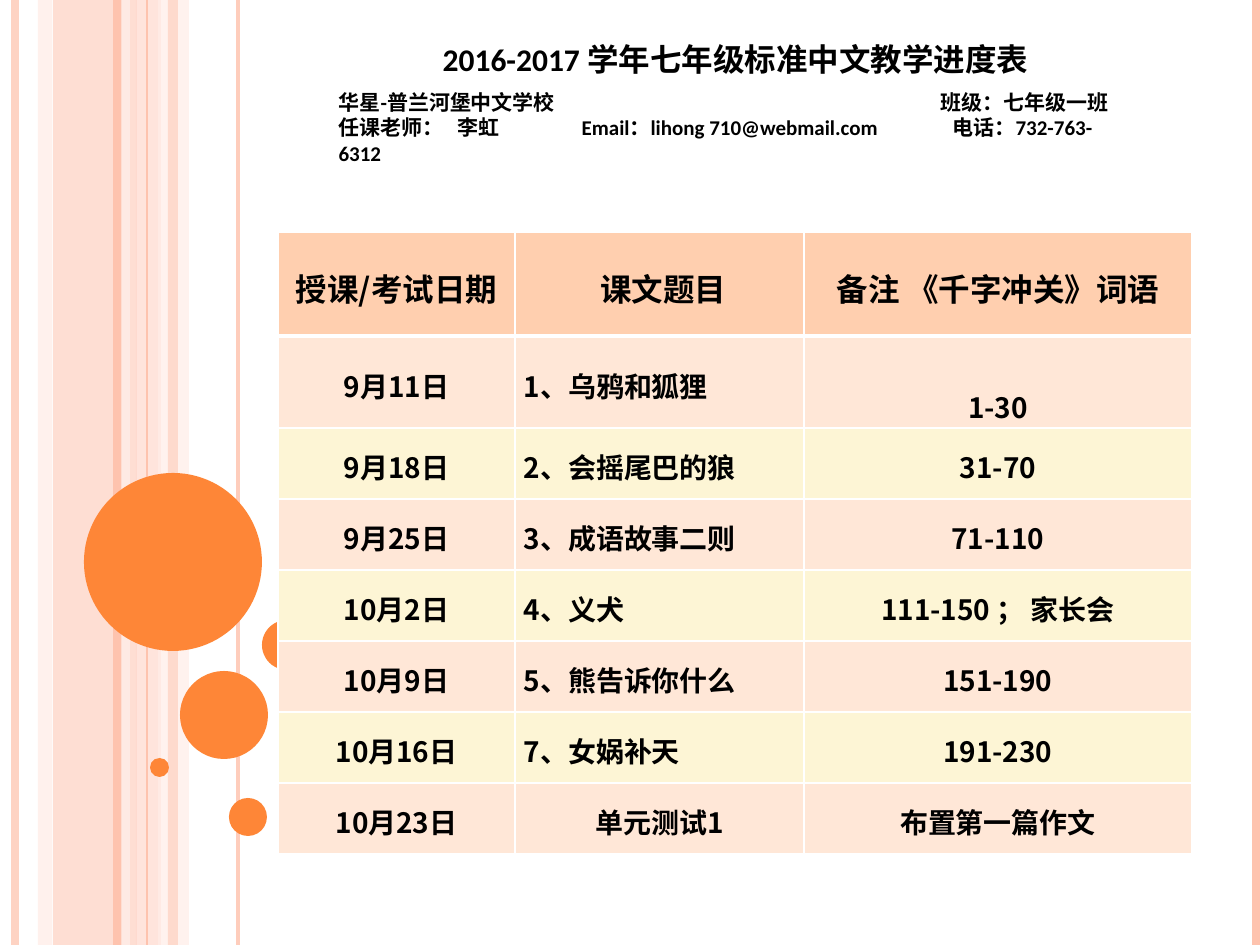
import pptx
import pptx.dml.color
import pptx.enum.shapes
import pptx.enum.text
import pptx.oxml
import pptx.oxml.ns
import pptx.util

SCALE = 914400 / 126
SLIDE_WIDTH, SLIDE_HEIGHT = 1260, 945
COLORS = {
    "rose": "FEC3AE", "blush": "FFD9CE", "mist": "FFEDE8", "orange": "FE8637",
    "header": "FFCFAF", "odd_row": "FFE7D7", "even_row": "FDF5D5",
    "white": "FFFFFF", "black": "000000",
}
CJK_FONT = "Noto Sans CJK SC"
ALIGN = pptx.enum.text.PP_ALIGN

WIDE_BANDS = [
    (53, 84, "rose", 54), (38, 14, "blush", 36),
    (136, 25, "blush", 70), (158, 31, "mist", 71),
]
THIN_LINES = [
    (15, 4.5, "rose", 73), (126, 4.5, "mist", 83), (117, 4.5, "rose", 100),
    (238, 2.25, "rose", 82), (147, 0.75, "rose", 100), (1256, 4.5, "rose", 100),
]
INNER_BAND = (168, 10, "rose", 51)
BUBBLES = [
    (84, 473, 178), (180, 671, 88), (150, 758, 19), (229, 798, 38), (262, 620, 50),
]
HEADING = [
    ("2016-2017 学年七年级标准中文教学进度表", 18, ALIGN.CENTER, []),
    ("华星-普兰河堡中文学校\t班级：七年级一班", 12, ALIGN.LEFT, [602]),
    ("任课老师：\t李虹\tEmail：lihong 710@webmail.com\t电话：732-763-6312",
     12, ALIGN.LEFT, [119, 243, 614]),
]
COLUMN_WIDTHS = [237, 289, 388]
ROW_HEIGHTS = [104, 92] + [71] * 6
SCHEDULE = [
    ("授课/考试日期", "课文题目", "备注 《千字冲关》词语"),
    ("9月11日", "1、乌鸦和狐狸", "1-30"),
    ("9月18日", "2、会摇尾巴的狼", "31-70"),
    ("9月25日", "3、成语故事二则", "71-110"),
    ("10月2日", "4、义犬", "111-150 ； 家长会"),
    ("10月9日", "5、熊告诉你什么", "151-190"),
    ("10月16日", "7、女娲补天", "191-230"),
    ("10月23日", "单元测试1", "布置第一篇作文"),
]


def px(length):
    """Turn pixels into EMU."""
    return pptx.util.Emu(round(length * SCALE))


def rgb(color):
    """Look up a named colour."""
    return pptx.dml.color.RGBColor.from_string(COLORS[color])


def add_child(parent, tag, **attributes):
    """Append a DrawingML element with attributes."""
    child = pptx.oxml.parse_xml(f"<a:{tag} {pptx.oxml.ns.nsdecls('a')}/>")
    for key, value in attributes.items():
        child.set(key, str(value))
    parent.append(child)
    return child


def set_opacity(element, percent):
    """Make the colours inside an element partly transparent."""
    if percent < 100:
        for color in element.iter(pptx.oxml.ns.qn("a:srgbClr")):
            add_child(color, "alpha", val=percent * 1000)


def add_filled(slide, kind, left, top, width, height, color, opacity=100):
    """Add a borderless shape in one colour."""
    shape = slide.shapes.add_shape(kind, px(left), px(top), px(width), px(height))
    shape.shadow.inherit = False
    shape.fill.solid()
    shape.fill.fore_color.rgb = rgb(color)
    shape.line.fill.background()
    set_opacity(shape._element.spPr, opacity)


def add_band(slide, left, width, color, opacity):
    """Add a vertical band over the full height."""
    rectangle = pptx.enum.shapes.MSO_SHAPE.RECTANGLE
    add_filled(slide, rectangle, left, 0, width, SLIDE_HEIGHT, color, opacity)


def add_thin_line(slide, x, weight, color, opacity):
    """Add a vertical line over the full height."""
    straight = pptx.enum.shapes.MSO_CONNECTOR.STRAIGHT
    line = slide.shapes.add_connector(straight, px(x), 0, px(x), px(SLIDE_HEIGHT))
    line.line.color.rgb = rgb(color)
    line.line.width = pptx.util.Pt(weight)
    set_opacity(line._element.spPr, opacity)
    add_child(line._element.spPr, "effectLst")


def format_runs(paragraph, font, size):
    """Give every run of a paragraph bold black type."""
    for run in paragraph.runs:
        run.font.name = font
        run.font.size = pptx.util.Pt(size)
        run.font.bold = True
        run.font.color.rgb = rgb("black")


def fill_heading(slide):
    """Place the title and the class details in the title placeholder."""
    heading = slide.shapes.title
    heading.left, heading.top, heading.width, heading.height = map(px, (326, 45, 819, 115))
    frame = heading.text_frame
    frame.word_wrap = True
    frame.auto_size = pptx.enum.text.MSO_AUTO_SIZE.SHAPE_TO_FIT_TEXT
    frame.vertical_anchor = pptx.enum.text.MSO_ANCHOR.MIDDLE
    frame.text = "\n".join(text for text, *_ in HEADING)
    for paragraph, (_, size, align, stops) in zip(frame.paragraphs, HEADING):
        paragraph.alignment = align
        format_runs(paragraph, "Calibri", size)
        if stops:
            tabs = add_child(paragraph._p.get_or_add_pPr(), "tabLst")
            for stop in stops:
                add_child(tabs, "tab", pos=px(stop), algn="l")
    frame.paragraphs[0].space_after = pptx.util.Pt(7)


def set_borders(cell, top, bottom):
    """Draw white cell borders, with top and bottom weights in points."""
    for side, weight in (("L", 1), ("R", 1), ("T", top), ("B", bottom)):
        border = add_child(cell._tc.get_or_add_tcPr(), f"ln{side}", w=pptx.util.Pt(weight))
        add_child(add_child(border, "solidFill"), "srgbClr", val=COLORS["white"])


def fill_cell(cell, text, row, align):
    """Write and format one cell of the schedule."""
    set_borders(cell, 3 if row == 1 else 1, 3 if row == 0 else 1)
    cell.fill.solid()
    cell.fill.fore_color.rgb = rgb("header" if row == 0 else ("even_row", "odd_row")[row % 2])
    cell.margin_left = cell.margin_right = px(9)
    cell.margin_top = cell.margin_bottom = 0
    cell.vertical_anchor = pptx.enum.text.MSO_ANCHOR.MIDDLE
    cell.text_frame.text = text
    paragraph = cell.text_frame.paragraphs[0]
    paragraph.alignment = align
    paragraph.line_spacing = 1.15
    format_runs(paragraph, CJK_FONT, 16 if row else 18)
    for run in paragraph.runs:
        add_child(run._r.get_or_add_rPr(), "ea", typeface=CJK_FONT)


def add_schedule(slide):
    """Add the table of dates, lessons and word ranges."""
    table = slide.shapes.add_table(
        len(SCHEDULE), len(COLUMN_WIDTHS), px(278), px(232),
        px(sum(COLUMN_WIDTHS)), px(sum(ROW_HEIGHTS))).table
    for column, width in zip(table.columns, COLUMN_WIDTHS):
        column.width = px(width)
    for row, texts in enumerate(SCHEDULE):
        table.rows[row].height = px(ROW_HEIGHTS[row])
        for column, text in enumerate(texts):
            is_lesson = column == 1 and "、" in text
            align = ALIGN.LEFT if is_lesson else ALIGN.CENTER
            fill_cell(table.cell(row, column), text, row, align)
    table.cell(0, 1).margin_left = px(17)
    table.cell(1, 2).margin_top = px(43)


def main():
    """Build and save the slide."""
    deck = pptx.Presentation()
    deck.slide_width, deck.slide_height = px(SLIDE_WIDTH), px(SLIDE_HEIGHT)
    slide = deck.slides.add_slide(deck.slide_layouts[5])
    for band in WIDE_BANDS:
        add_band(slide, *band)
    for line in THIN_LINES:
        add_thin_line(slide, *line)
    add_band(slide, *INNER_BAND)
    for left, top, size in BUBBLES:
        add_filled(slide, pptx.enum.shapes.MSO_SHAPE.OVAL, left, top, size, size, "orange")
    add_schedule(slide)
    fill_heading(slide)
    deck.save("out.pptx")


if __name__ == "__main__":
    main()
